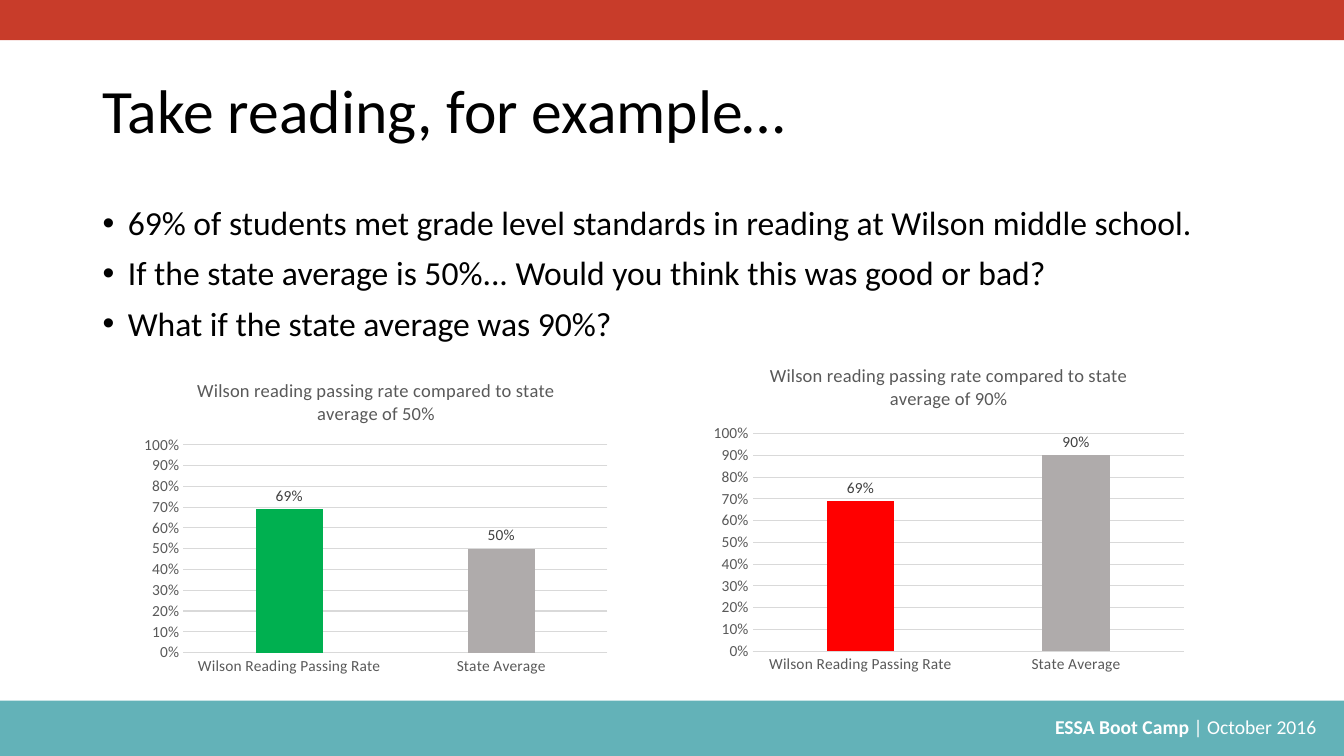
import lxml.etree
import pptx
import pptx.chart.data
import pptx.dml.color
import pptx.enum.chart
import pptx.enum.shapes
import pptx.enum.text
import pptx.oxml.ns
import pptx.util

RGB = pptx.dml.color.RGBColor
RED = RGB(0xC8, 0x3C, 0x2A)
TEAL = RGB(0x63, 0xB2, 0xB8)
WHITE = RGB(0xFF, 0xFF, 0xFF)
BLACK = RGB(0, 0, 0)
GREEN = RGB(0, 0xB0, 0x50)
ALERT = RGB(0xFF, 0, 0)
GRAY = RGB(0xAF, 0xAB, 0xAB)
RULE = RGB(0xD9, 0xD9, 0xD9)
DIM = RGB(0x59, 0x59, 0x59)
DARK = RGB(0x40, 0x40, 0x40)

FACE = "Calibri"
WIDE, HIGH = 13.33, 7.5
LEFT, SPAN = 0.92 / WIDE, 11.5 / WIDE
BASE = 6.76 / HIGH
ALIGN = pptx.enum.text.PP_ALIGN
ANCHOR = pptx.enum.text.MSO_ANCHOR
qn = pptx.oxml.ns.qn


def place(x, y, w, h):
    return [pptx.util.Inches(round(share * size, 2))
            for share, size in zip((x, y, w, h), (WIDE, HIGH, WIDE, HIGH))]


def style(font, size, color, bold=False):
    font.name = FACE
    font.size = pptx.util.Pt(size)
    font.color.rgb = color
    font.bold = bold


def add_band(slide, y, h, color):
    band = slide.shapes.add_shape(
        pptx.enum.shapes.MSO_SHAPE.RECTANGLE, *place(0, y, 1, h))
    band.shadow.inherit = False
    band.fill.solid()
    band.fill.fore_color.rgb = color
    band.line.fill.background()


def add_bullet(para):
    props = para._p.get_or_add_pPr()
    indent = pptx.util.Inches(0.25)
    props.set("marL", str(indent))
    props.set("indent", str(-indent))
    face = lxml.etree.SubElement(props, qn("a:buFont"))
    face.set("typeface", "Arial")
    mark = lxml.etree.SubElement(props, qn("a:buChar"))
    mark.set("char", "•")


def add_text(slide, box, lines, size, color=BLACK, align=ALIGN.LEFT,
             anchor=ANCHOR.TOP, space=1.0, before=0, bullet=False):
    frame = slide.shapes.add_textbox(*place(*box)).text_frame
    frame.word_wrap = True
    frame.vertical_anchor = anchor
    for i, runs in enumerate(lines):
        para = frame.add_paragraph() if i else frame.paragraphs[0]
        para.alignment = align
        para.line_spacing = space
        para.space_before = pptx.util.Pt(before)
        if bullet:
            add_bullet(para)
        for words, bold in runs:
            run = para.add_run()
            run.text = words
            style(run.font, size, color, bold)


def rule_line(line):
    line.color.rgb = RULE
    line.width = pptx.util.Pt(0.75)


def set_plot(chart, x, y, w, h):
    area = chart.element.find(".//" + qn("c:plotArea"))
    for old in area.findall(qn("c:layout")):
        area.remove(old)
    layout = lxml.etree.Element(qn("c:layout"))
    manual = lxml.etree.SubElement(layout, qn("c:manualLayout"))
    for tag, value in (("layoutTarget", "inner"), ("xMode", "edge"),
                       ("yMode", "edge"), ("x", x), ("y", y),
                       ("w", w), ("h", h)):
        lxml.etree.SubElement(manual, qn("c:" + tag)).set("val", str(value))
    area.insert(0, layout)


def add_bars(slide, box, state, color):
    data = pptx.chart.data.CategoryChartData(number_format="0%")
    data.categories = ["Wilson Reading Passing Rate", "State Average"]
    data.add_series("Series 1", (0.69, state))
    kind = pptx.enum.chart.XL_CHART_TYPE.COLUMN_CLUSTERED
    chart = slide.shapes.add_chart(kind, *place(*box), data).chart
    style(chart.font, 11, BLACK)
    chart.has_legend = False
    chart.has_title = True
    para = chart.chart_title.text_frame.paragraphs[0]
    run = para.add_run()
    run.text = ("Wilson reading passing rate compared to state "
                f"average of {state:.0%}")
    style(run.font, 13.2, DIM)
    chart.chart_title.include_in_layout = False
    set_plot(chart, 0.1, 0.26, 0.88, 0.65)

    for axis in (chart.category_axis, chart.value_axis):
        style(axis.tick_labels.font, 11, DIM)
        axis.major_tick_mark = pptx.enum.chart.XL_TICK_MARK.NONE
        axis.minor_tick_mark = pptx.enum.chart.XL_TICK_MARK.NONE
    rule_line(chart.category_axis.format.line)
    scale = chart.value_axis
    scale.minimum_scale, scale.maximum_scale = 0, 1
    scale.major_unit = 0.1
    scale.format.line.fill.background()
    scale.tick_labels.number_format = "0%"
    scale.tick_labels.number_format_is_linked = False
    scale.has_major_gridlines = True
    rule_line(scale.major_gridlines.format.line)

    plot = chart.plots[0]
    plot.vary_by_categories = False
    plot.gap_width, plot.overlap = 219, -27
    bars = plot.series[0]
    for fill, shade in ((bars.format.fill, GRAY),
                        (bars.points[0].format.fill, color)):
        fill.solid()
        fill.fore_color.rgb = shade
    plot.has_data_labels = True
    labels = plot.data_labels
    labels.show_value = True
    labels.position = pptx.enum.chart.XL_LABEL_POSITION.OUTSIDE_END
    labels.number_format = "0%"
    labels.number_format_is_linked = False
    style(labels.font, 11, DARK)


def main():
    deck = pptx.Presentation()
    deck.slide_width = pptx.util.Inches(WIDE)
    deck.slide_height = pptx.util.Inches(HIGH)
    slide = deck.slides.add_slide(deck.slide_layouts[6])

    foot, head = 0.55 / HIGH, 0.4 / HIGH
    add_band(slide, 1 - foot, foot, TEAL)
    add_band(slide, 0, head, RED)
    add_text(slide, (0.36, 7.04 / HIGH, 0.63, 0.045),
             [[("ESSA Boot Camp ", True), ("| October 2016 ", False)]],
             14, color=WHITE, align=ALIGN.RIGHT)
    add_text(slide, (LEFT, head, SPAN, 1.45 / HIGH),
             [[("Take reading, for example…", False)]],
             44, anchor=ANCHOR.MIDDLE, space=0.9)
    points = [
        "69% of students met grade level standards in reading "
        "at Wilson middle school.",
        "If the state average is 50%... Would you think this was good or bad?",
        "What if the state average was 90%?",
    ]
    top = 2 / HIGH
    add_text(slide, (LEFT, top, SPAN, BASE - top),
             [[(point, False)] for point in points],
             24, space=0.9, before=10, bullet=True)

    for x, y, w, state, color in ((1.34, 3.59, 4.78, 0.5, GREEN),
                                  (6.98, 3.44, 4.86, 0.9, ALERT)):
        box = (x / WIDE, y / HIGH, w / WIDE, BASE - y / HIGH)
        add_bars(slide, box, state, color)
    deck.save("out.pptx")


if __name__ == "__main__":
    main()
